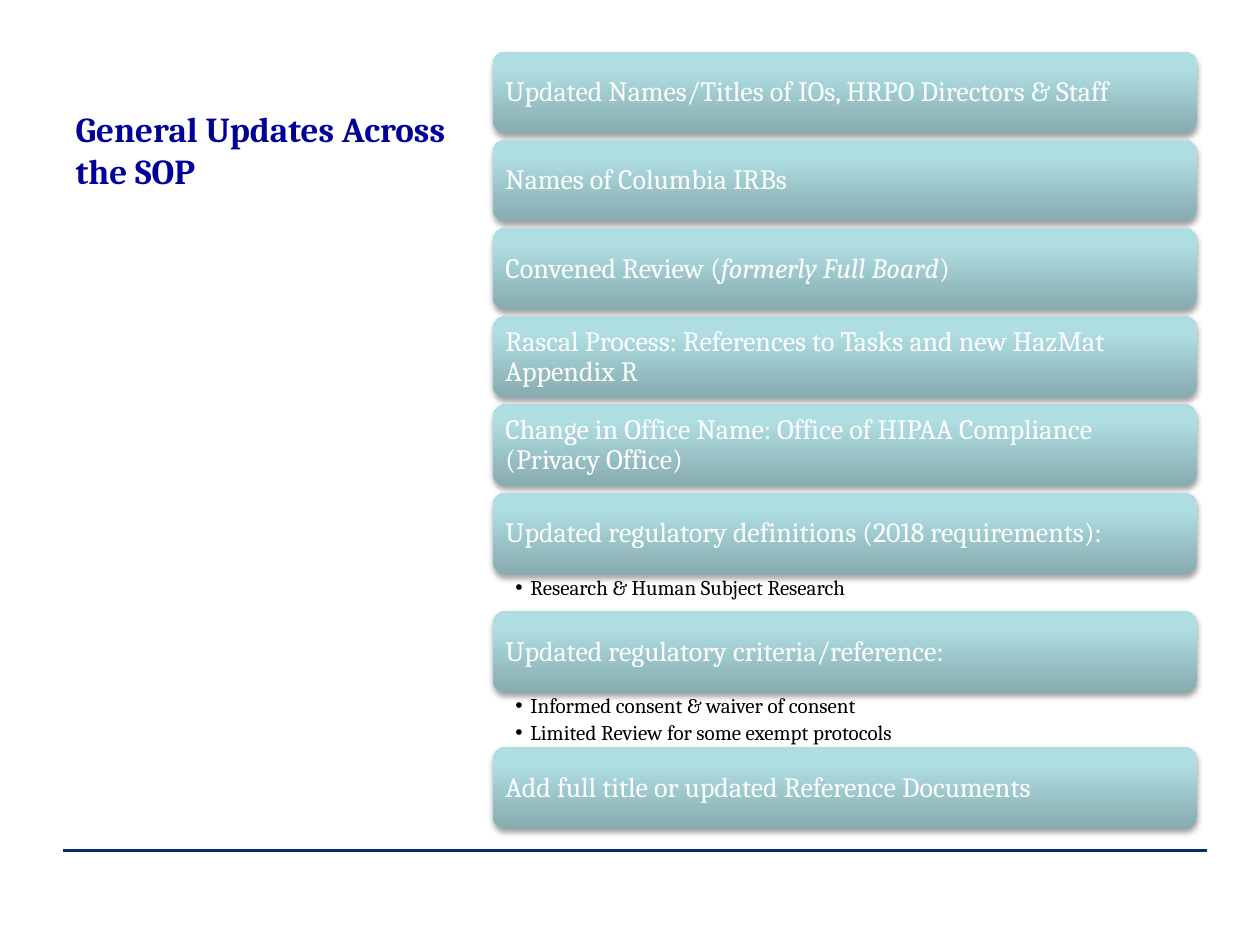
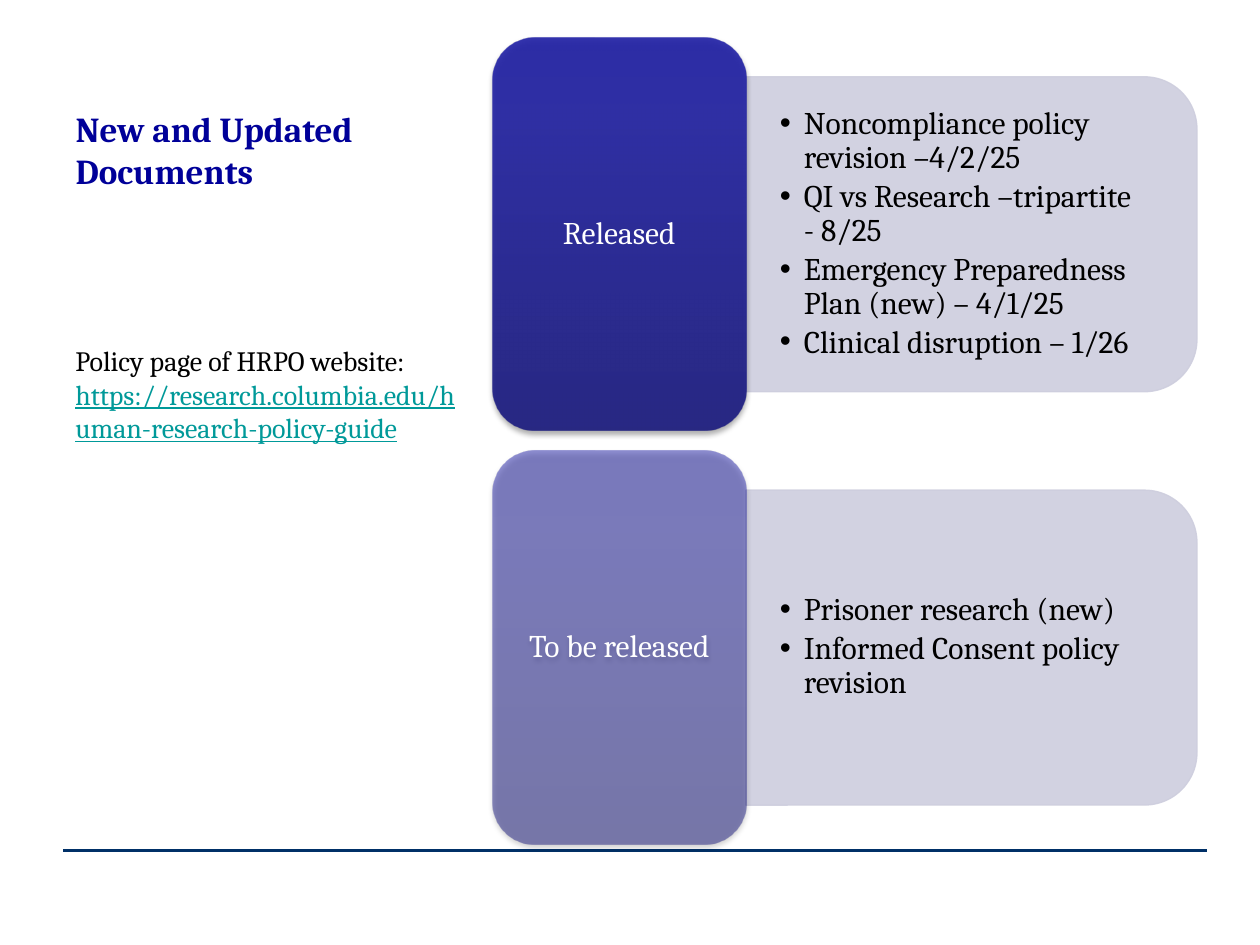
import lxml.etree
import pptx
import pptx.dml.color
import pptx.enum.shapes
import pptx.enum.text
import pptx.oxml.ns
import pptx.util

Inches = pptx.util.Inches
Pt = pptx.util.Pt
RGBColor = pptx.dml.color.RGBColor
Shape = pptx.enum.shapes.MSO_SHAPE
Anchor = pptx.enum.text.MSO_ANCHOR
Align = pptx.enum.text.PP_ALIGN
qn = pptx.oxml.ns.qn

TITLE_BLUE = RGBColor(0x00, 0x00, 0x99)
RULE_BLUE = RGBColor(0x00, 0x30, 0x67)
LINK_TEAL = RGBColor(0x00, 0x99, 0x99)
PANEL_GREY = RGBColor(0xCE, 0xCE, 0xDE)
SHADOW_BLACK = TEXT_BLACK = RGBColor(0x00, 0x00, 0x00)
WHITE = RGBColor(0xFF, 0xFF, 0xFF)
BAR_GRADIENT = (
    (0, RGBColor(0x87, 0xAB, 0xAE)),
    (80, RGBColor(0xAF, 0xDE, 0xE2)),
    (100, RGBColor(0xAF, 0xE0, 0xE4)),
)
STATUS_GRADIENT = (
    (0, RGBColor(0x1B, 0x1B, 0x7E)),
    (80, RGBColor(0x23, 0x23, 0xA3)),
    (100, RGBColor(0x20, 0x20, 0xA6)),
)

FONT = "Cambria"
COLUMN_LEFT = 3.91
COLUMN_WIDTH = 5.59

UPDATES = [
    (["Updated Names/Titles of IOs, HRPO Directors & Staff"], []),
    (["Names of Columbia IRBs"], []),
    (["Convened Review (", ("formerly Full Board", {"italic": True}), ")"], []),
    (["Rascal Process: References to Tasks and new HazMat Appendix R"], []),
    (["Change in Office Name: Office of HIPAA Compliance (Privacy Office)"], []),
    (["Updated regulatory definitions (2018 requirements):"],
     ["Research & Human Subject Research"]),
    (["Updated regulatory criteria/reference:"],
     ["Informed consent & waiver of consent",
      "Limited Review for some exempt protocols"]),
    (["Add full title or updated Reference Documents"], []),
]
DETAIL_HEIGHTS = {0: 0.05, 1: 0.29, 2: 0.43}

DOCUMENT_GROUPS = [
    ("Released", 90, [
        "Noncompliance policy revision –4/2/25",
        "QI vs Research –tripartite - 8/25",
        "Emergency Preparedness Plan (new) – 4/1/25",
        "Clinical disruption – 1/26",
    ]),
    ("To be released", 50, [
        "Prisoner research (new)",
        "Informed Consent policy revision",
    ]),
]


def set_attributes(target, formats):
    for name, value in formats.items():
        setattr(target, name, value)


def set_font(font, color, **formats):
    set_attributes(font, {"name": FONT, **formats})
    font.color.rgb = color


def set_frame(text_frame, anchor, margins):
    left, top, right, bottom = map(Inches, margins)
    set_attributes(text_frame, {
        "word_wrap": True, "vertical_anchor": anchor,
        "margin_left": left, "margin_top": top,
        "margin_right": right, "margin_bottom": bottom,
    })


def add_child(parent, tag, **attributes):
    values = {name: str(value) for name, value in attributes.items()}
    return lxml.etree.SubElement(parent, qn(tag), values)


def add_color(parent, color, opacity):
    node = add_child(parent, "a:srgbClr", val=color)
    add_child(node, "a:alpha", val=opacity * 1000)


def fill_gradient(shape, stops, opacity):
    properties = shape._element.spPr
    gradient = add_child(properties, "a:gradFill", rotWithShape=1)
    stop_list = add_child(gradient, "a:gsLst")
    for position, color in stops:
        add_color(add_child(stop_list, "a:gs", pos=position * 1000), color, opacity)
    add_child(gradient, "a:lin", ang=270 * 60000, scaled=0)
    properties.find(qn("a:prstGeom")).addnext(gradient)


def add_shadow(shape):
    shape.shadow.inherit = False
    effects = shape._element.spPr.find(qn("a:effectLst"))
    shadow = add_child(effects, "a:outerShdw", blurRad=Pt(3.1), dist=Pt(1.8),
                       dir=90 * 60000, rotWithShape=0)
    add_color(shadow, SHADOW_BLACK, 35)


def write_runs(paragraph, pieces, color, size):
    for piece in pieces:
        text, formats = (piece, {}) if isinstance(piece, str) else piece
        run = paragraph.add_run()
        run.text = text
        set_font(run.font, **{"color": color, "size": Pt(size), **formats})


def add_gradient_box(slide, box, stops, opacity, pieces, size, align, margins):
    shape = slide.shapes.add_shape(Shape.ROUNDED_RECTANGLE, *map(Inches, box))
    fill_gradient(shape, stops, opacity)
    shape.line.fill.background()
    add_shadow(shape)
    set_frame(shape.text_frame, Anchor.MIDDLE, margins)
    paragraph = shape.text_frame.paragraphs[0]
    set_attributes(paragraph, {"alignment": align, "line_spacing": 0.9})
    write_runs(paragraph, pieces, WHITE, size)


def add_bullets(slide, box, items, size, indent, gap, anchor, margins):
    text_frame = slide.shapes.add_textbox(*map(Inches, box)).text_frame
    set_frame(text_frame, anchor, margins)
    for index, item in enumerate(items):
        paragraph = text_frame.add_paragraph() if index else text_frame.paragraphs[0]
        properties = paragraph._p.get_or_add_pPr()
        properties.set("marL", str(Inches(indent)))
        properties.set("indent", str(-Inches(indent)))
        add_child(properties, "a:buFont", typeface="Arial")
        add_child(properties, "a:buChar", char="•")
        set_attributes(paragraph, {"line_spacing": 0.9, "space_after": Pt(size * gap)})
        write_runs(paragraph, [item], TEXT_BLACK, size)


def add_rule(slide):
    rule = slide.shapes.add_connector(
        pptx.enum.shapes.MSO_CONNECTOR.STRAIGHT,
        Inches(0.5), Inches(6.75), Inches(9.58), Inches(6.75))
    rule.line.color.rgb = RULE_BLUE
    rule.line.width = Pt(2.25)
    add_child(rule._element.spPr, "a:effectLst")


def add_titled_slide(presentation, title):
    slide = presentation.slides.add_slide(presentation.slide_layouts[5])
    add_rule(slide)
    placeholder = slide.shapes.title
    set_attributes(placeholder, {
        "left": Inches(0.5), "top": Inches(0.3),
        "width": Inches(3.29), "height": Inches(1.27),
    })
    set_frame(placeholder.text_frame, Anchor.BOTTOM, (0.1, 0.05, 0.1, 0.05))
    placeholder.text_frame.text = title
    paragraph = placeholder.text_frame.paragraphs[0]
    paragraph.alignment = Align.LEFT
    set_font(paragraph.runs[0].font, TITLE_BLUE, size=Pt(20), bold=True)
    return slide


def add_update_bars(slide):
    top, height = 0.41, 0.65
    for heading, details in UPDATES:
        add_gradient_box(slide, (COLUMN_LEFT, top, COLUMN_WIDTH, height), BAR_GRADIENT,
                         100, heading, 16, Align.LEFT, (0.07, 0.07, 0.07, 0.07))
        top += height
        detail_height = DETAIL_HEIGHTS[len(details)]
        if details:
            add_bullets(slide, (COLUMN_LEFT, top, COLUMN_WIDTH, detail_height), details,
                        12, 0.12, 0.2, Anchor.TOP, (0.18, 0.02, 0.12, 0.02))
        top += detail_height


def add_panel(slide, left, top, width, height):
    rotated_left = left + (width - height) / 2
    rotated_top = top + (height - width) / 2
    panel = slide.shapes.add_shape(
        Shape.ROUND_2_SAME_RECTANGLE,
        *map(Inches, (rotated_left, rotated_top, height, width)))
    panel.rotation = 90
    panel.shadow.inherit = False
    panel.fill.solid()
    panel.fill.fore_color.rgb = PANEL_GREY
    panel.line.color.rgb = PANEL_GREY
    panel.line.width = Pt(0.75)
    for color in panel._element.spPr.iter(qn("a:srgbClr")):
        add_child(color, "a:alpha", val=90000)


def add_document_groups(slide):
    status_width, status_height, panel_height = 2.01, 3.12, 2.5
    panel_left = COLUMN_LEFT + status_width
    panel_width = COLUMN_WIDTH - status_width
    for index, (status, opacity, documents) in enumerate(DOCUMENT_GROUPS):
        top = 0.3 + index * 3.28
        panel_top = top + (status_height - panel_height) / 2
        add_panel(slide, panel_left, panel_top, panel_width, panel_height)
        add_bullets(slide, (panel_left, panel_top + 0.12, 3.46, 2.25), documents,
                    18, 0.19, 0.15, Anchor.MIDDLE, (0.27, 0.14, 0.27, 0.14))
        add_gradient_box(slide, (COLUMN_LEFT, top, status_width, status_height),
                         STATUS_GRADIENT, opacity, [status], 18, Align.CENTER,
                         (0.07, 0.04, 0.07, 0.04))


def add_policy_note(slide):
    box = slide.shapes.add_textbox(*map(Inches, (0.5, 2.68, 3.29, 0.9)))
    set_frame(box.text_frame, Anchor.TOP, (0.1, 0.05, 0.1, 0.05))
    write_runs(box.text_frame.paragraphs[0], [
        "Policy page of HRPO website: ",
        ("https://research.columbia.edu/human-research-policy-guide",
         {"color": LINK_TEAL, "underline": True}),
    ], TEXT_BLACK, 16)


def main():
    presentation = pptx.Presentation()
    presentation.slide_width = Inches(10)
    presentation.slide_height = Inches(7.5)
    add_update_bars(add_titled_slide(presentation, "General Updates Across the SOP"))
    documents_slide = add_titled_slide(presentation, "New and Updated Documents")
    add_policy_note(documents_slide)
    add_document_groups(documents_slide)
    presentation.save("out.pptx")


if __name__ == "__main__":
    main()
